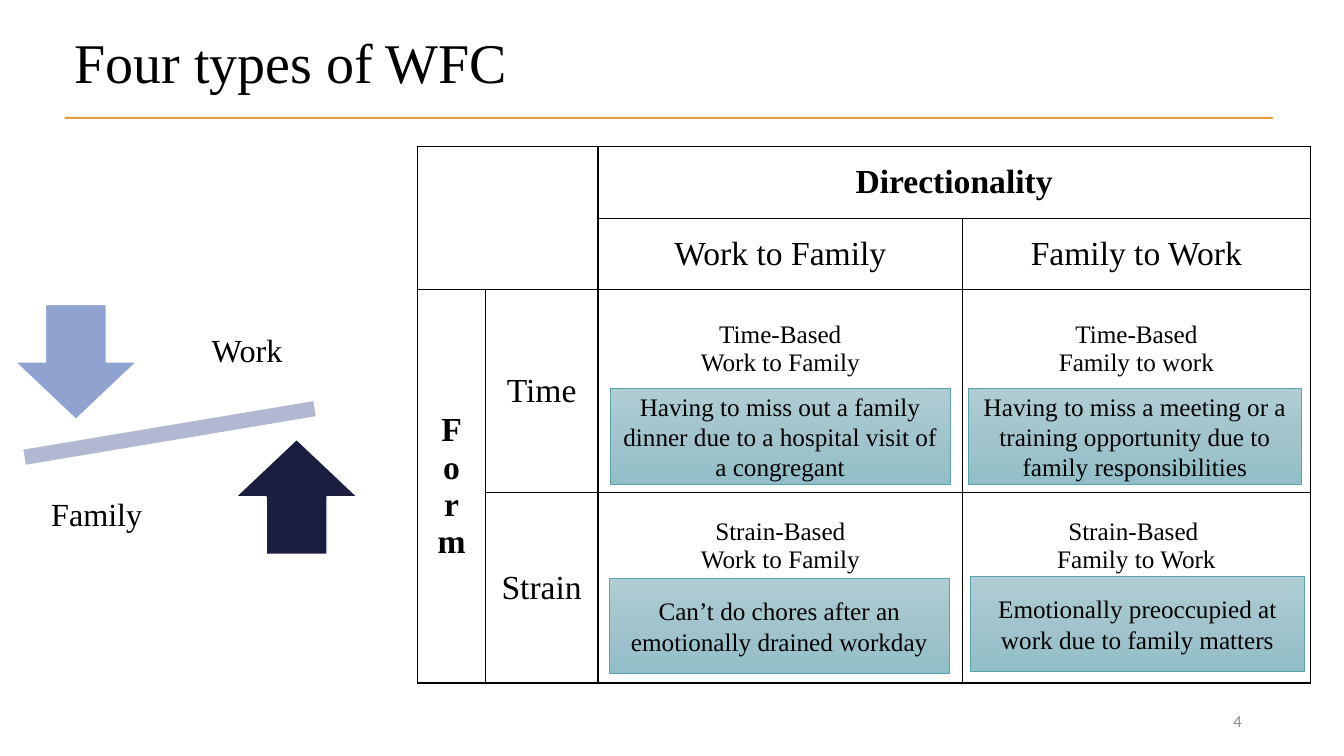
import copy
import dataclasses
import pptx
import pptx.dml.color
import pptx.enum.shapes
import pptx.enum.text
import pptx.oxml
import pptx.oxml.ns
import pptx.util

Cm = pptx.util.Cm
Pt = pptx.util.Pt
Kind = pptx.enum.shapes.MSO_SHAPE
Align = pptx.enum.text.PP_ALIGN
Anchor = pptx.enum.text.MSO_ANCHOR
qn = pptx.oxml.ns.qn


@dataclasses.dataclass(frozen=True)
class Theme:
    serif: str = "Times New Roman"
    sans: str = "Calibri"
    ink: str = "000000"
    white: str = "FFFFFF"
    grey: str = "8C8C8C"
    gold: str = "DC7F05"
    plank: str = "B2B8D2"
    down: str = "90A2CF"
    up: str = "1B1E3E"
    teal: tuple = ("AFCDD3", "A2C4CC", "91BEC7")
    edge: str = "5AA2AE"
    title: int = 40
    head: int = 24
    label: int = 23
    body: int = 18
    small: int = 12


THEME = Theme()


def color(code):
    return pptx.dml.color.RGBColor.from_string(code)


def write(frame, lines, size, align=Align.CENTER, bold=False, font=THEME.serif, ink=THEME.ink):
    frame.word_wrap = True
    for i, line in enumerate(lines):
        para = frame.paragraphs[0] if i == 0 else frame.add_paragraph()
        para.alignment = align
        run = para.add_run()
        run.text = line
        run.font.name = font
        run.font.size = Pt(size)
        run.font.bold = bold
        run.font.color.rgb = color(ink)


def text_box(shapes, box, line, size, **style):
    frame = shapes.add_textbox(*map(Cm, box)).text_frame
    write(frame, [line], size, **style)
    return frame


def solid(shapes, kind, box, fill):
    shape = shapes.add_shape(kind, *map(Cm, box))
    shape.shadow.inherit = False
    shape.fill.solid()
    shape.fill.fore_color.rgb = color(fill)
    shape.line.color.rgb = color(THEME.white)
    shape.line.width = Pt(1)
    return shape


def header(slide, box):
    x, y, w, h = box
    text_box(slide.shapes, (x, y, 12.5, 1.96), "Four types of WFC", THEME.title, align=Align.LEFT)
    rule = slide.shapes.add_connector(
        pptx.enum.shapes.MSO_CONNECTOR.STRAIGHT, Cm(x), Cm(y + h), Cm(x + w), Cm(y + h))
    rule.line.color.rgb = color(THEME.gold)
    rule.line.width = Pt(1.5)
    props = rule._element.spPr
    tint = props.find(".//" + qn("a:srgbClr"))
    tint.append(pptx.oxml.parse_xml(
        f'<a:alpha {pptx.oxml.ns.nsdecls("a")} val="75000"/>'))
    props.append(pptx.oxml.parse_xml(f'<a:effectLst {pptx.oxml.ns.nsdecls("a")}/>'))


def balance(slide, box):
    x, y = box
    shapes = slide.shapes.add_group_shape().shapes
    plank = solid(shapes, Kind.MATH_MINUS, (x - 1.17, y + 2.64, 10.13, 1.8), THEME.plank)
    plank.rotation = 350.5
    arrows = ((Kind.DOWN_ARROW, 0, 0.3, THEME.down), (Kind.UP_ARROW, 5.56, 3.7, THEME.up))
    for kind, dx, dy, fill in arrows:
        solid(shapes, kind, (x + dx, y + dy, 3.07, 2.9), fill)
    for word, dx, dy in (("Work", 4.21, 0), ("Family", 0.42, 4.12)):
        frame = text_box(shapes, (x + dx, y + dy, 3.28, 3.02), word, THEME.label)
        frame.vertical_anchor = Anchor.MIDDLE
        frame.margin_left = frame.margin_right = Cm(0.46)
        frame.margin_top = frame.margin_bottom = Cm(0.46)
        frame.paragraphs[0].line_spacing = 0.9


def borders(cell, bare):
    props = cell._tc.get_or_add_tcPr()
    for i, side in enumerate("LRTB"):
        paint = "<a:noFill/>" if side in bare else (
            f'<a:solidFill><a:srgbClr val="{THEME.ink}"/></a:solidFill>')
        props.insert(i, pptx.oxml.parse_xml(
            f'<a:ln{side} {pptx.oxml.ns.nsdecls("a")} w="12700">{paint}</a:ln{side}>'))


def matrix(slide, box):
    cols = (1.7, 2.84, 9.19, 8.76)
    rows = (1.82, 1.79, 5.11, 4.8)
    x, y = box
    table = slide.shapes.add_table(
        len(rows), len(cols), Cm(x), Cm(y), Cm(sum(cols)), Cm(sum(rows))).table
    table.first_row = table.horz_banding = False
    for col, width in zip(table.columns, cols):
        col.width = Cm(width)
    for row, height in zip(table.rows, rows):
        row.height = Cm(height)
    for r in range(len(rows)):
        for c in range(len(cols)):
            cell = table.cell(r, c)
            cell.fill.background()
            cell.vertical_anchor = Anchor.MIDDLE
            if r > 1 and c > 1:
                cell.margin_bottom = Cm(2.24)
            bare = "RL"[c] + "BT"[r] if r < 2 and c < 2 else ""
            borders(cell, bare)
    table.cell(0, 2).merge(table.cell(0, 3))
    table.cell(2, 0).merge(table.cell(3, 0))
    words = (
        (0, 2, ["Directionality"], THEME.head, True),
        (1, 2, ["Work to Family"], THEME.head, False),
        (1, 3, ["Family to Work"], THEME.head, False),
        (2, 0, list("Form"), THEME.head, True),
        (2, 1, ["Time"], THEME.head, False),
        (2, 2, ["Time-Based", "Work to Family"], THEME.body, False),
        (2, 3, ["Time-Based", "Family to work"], THEME.body, False),
        (3, 1, ["Strain"], THEME.head, False),
        (3, 2, ["Strain-Based", "Work to Family"], THEME.body, False),
        (3, 3, ["Strain-Based ", "Family to Work"], THEME.body, False),
    )
    for r, c, lines, size, bold in words:
        write(table.cell(r, c).text_frame, lines, size, bold=bold)


def card(slide, box, line):
    shape = slide.shapes.add_shape(Kind.RECTANGLE, *map(Cm, box))
    shape.shadow.inherit = False
    shape.fill.gradient()
    shape.fill.gradient_angle = 270
    stops = shape._element.spPr.find(".//" + qn("a:gsLst"))
    stops.insert(1, copy.deepcopy(stops[0]))
    for i, stop in enumerate(shape.fill.gradient_stops):
        stop.position = i / 2
        stop.color.rgb = color(THEME.teal[i])
    shape.line.color.rgb = color(THEME.edge)
    shape.line.width = Pt(0.5)
    shape.text_frame.vertical_anchor = Anchor.MIDDLE
    write(shape.text_frame, [line], THEME.body)


def cards(slide, box):
    x, y = box
    notes = (
        (4.85, 6.1, 8.56, "Having to miss out a family dinner due to a hospital visit of a congregant"),
        (13.88, 6.1, 8.38, "Having to miss a meeting or a training opportunity due to family responsibilities"),
        (4.83, 10.88, 8.56, "Can’t do chores after an emotionally drained workday"),
        (13.92, 10.83, 8.43, "Emotionally preoccupied at work due to family matters"),
    )
    for dx, dy, width, line in notes:
        card(slide, (x + dx, y + dy, width, 2.41), line)


def footer(slide, box):
    frame = text_box(slide.shapes, box, "4", THEME.small,
                     align=Align.RIGHT, font=THEME.sans, ink=THEME.grey)
    frame.vertical_anchor = Anchor.MIDDLE


def main():
    deck = pptx.Presentation()
    deck.slide_width, deck.slide_height = Cm(33.87), Cm(19.05)
    slide = deck.slides.add_slide(deck.slide_layouts[6])
    grid = (10.53, 3.69)
    balance(slide, (0.38, 7.37))
    matrix(slide, grid)
    header(slide, (1.63, 0.56, 30.45, 2.41))
    footer(slide, (23.93, 17.65, 7.62, 1.02))
    cards(slide, grid)
    deck.save("out.pptx")


if __name__ == "__main__":
    main()
